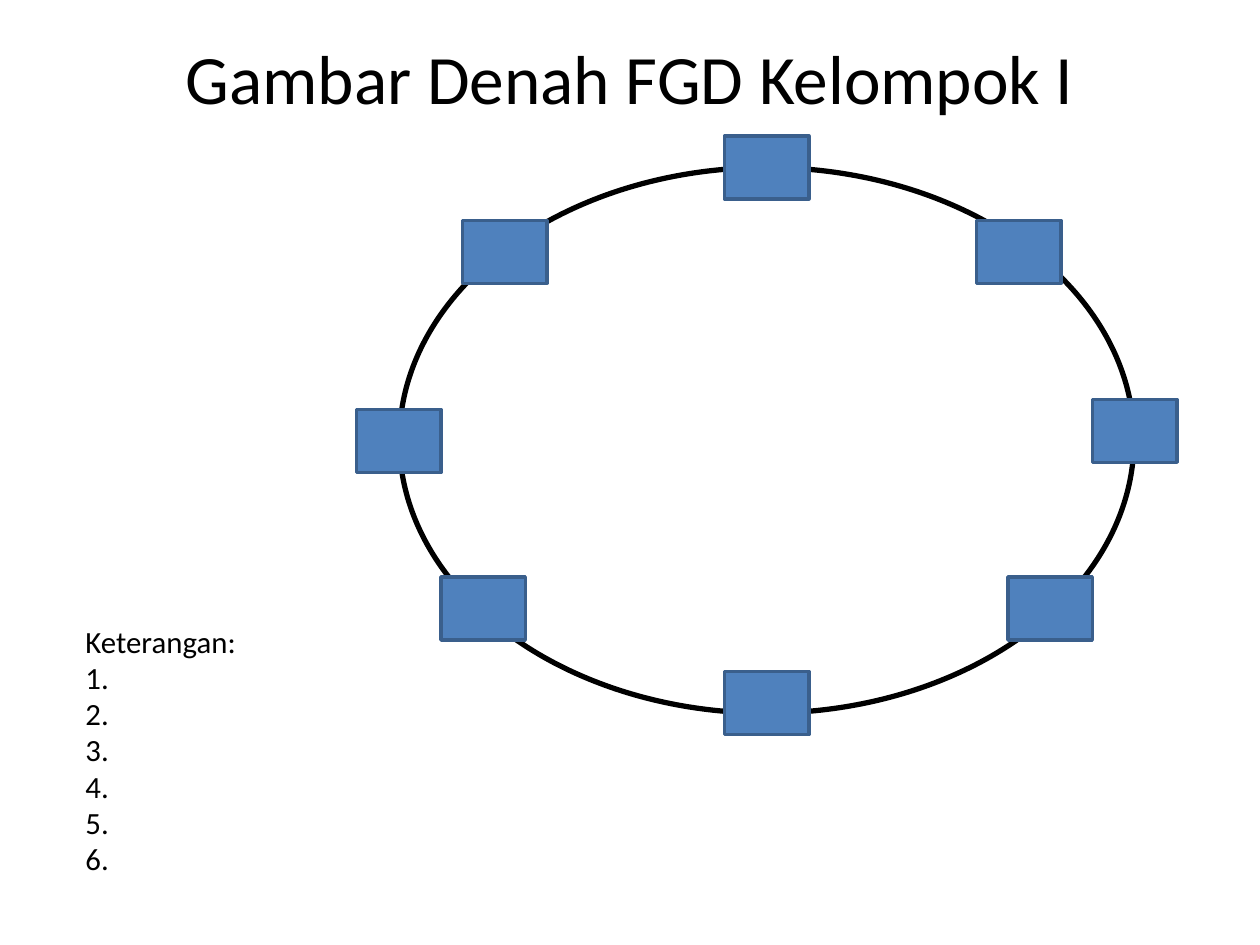
from pptx import Presentation
from pptx.dml.color import RGBColor
from pptx.enum.shapes import MSO_SHAPE as Shape
from pptx.enum.text import MSO_ANCHOR as Anchor, PP_ALIGN as Align
from pptx.util import Inches, Pt

TITLE = "Gambar Denah FGD Kelompok I"
LEGEND = ["Keterangan:"] + [f"{number}." for number in range(1, 7)]
TABLE_BOX = (3.17, 1.33, 5.83, 4.33)
SEAT_SIZE = (0.67, 0.5)
SEATS = [
    (5.75, 1.08), (8.67, 3.17), (2.83, 3.25), (5.75, 5.33),
    (7.75, 1.75), (3.67, 1.75), (8, 4.58), (3.5, 4.58),
]


def color(value):
    return RGBColor.from_string(value)


def place(holder, box):
    holder.left, holder.top, holder.width, holder.height = map(Inches, box)


def write(holder, lines, size, align=Align.LEFT, spacing=1.0):
    frame = holder.text_frame
    frame.word_wrap = True
    frame.vertical_anchor = Anchor.MIDDLE
    frame.text = "\n".join(lines)
    for paragraph in frame.paragraphs:
        paragraph.alignment = align
        paragraph.line_spacing = spacing
        paragraph.font.name = "Calibri"
        paragraph.font.size = Pt(size)
        paragraph.font.color.rgb = color("000000")


def draw(slide, kind, box, line, width, fill=None):
    shape = slide.shapes.add_shape(kind, *map(Inches, box))
    shape.shadow.inherit = False
    if fill:
        shape.fill.solid()
        shape.fill.fore_color.rgb = color(fill)
    else:
        shape.fill.background()
    shape.line.color.rgb = color(line)
    shape.line.width = Pt(width)


def main():
    deck = Presentation()
    deck.slide_width, deck.slide_height = Inches(10), Inches(7.5)
    slide = deck.slides.add_slide(deck.slide_layouts[5])

    heading = slide.shapes.title
    place(heading, (0.5, 0.3, 9, 0.62))
    write(heading, [TITLE], 39.6, align=Align.CENTER)

    draw(slide, Shape.OVAL, TABLE_BOX, "000000", 3)
    for seat in SEATS:
        draw(slide, Shape.RECTANGLE, seat + SEAT_SIZE, "3A5F8C", 2, fill="4F81BD")

    legend = slide.shapes.add_textbox(*map(Inches, (0.58, 4.75, 2.92, 2.42)))
    write(legend, LEGEND, 17.6, spacing=0.98)

    deck.save("out.pptx")


if __name__ == "__main__":
    main()
